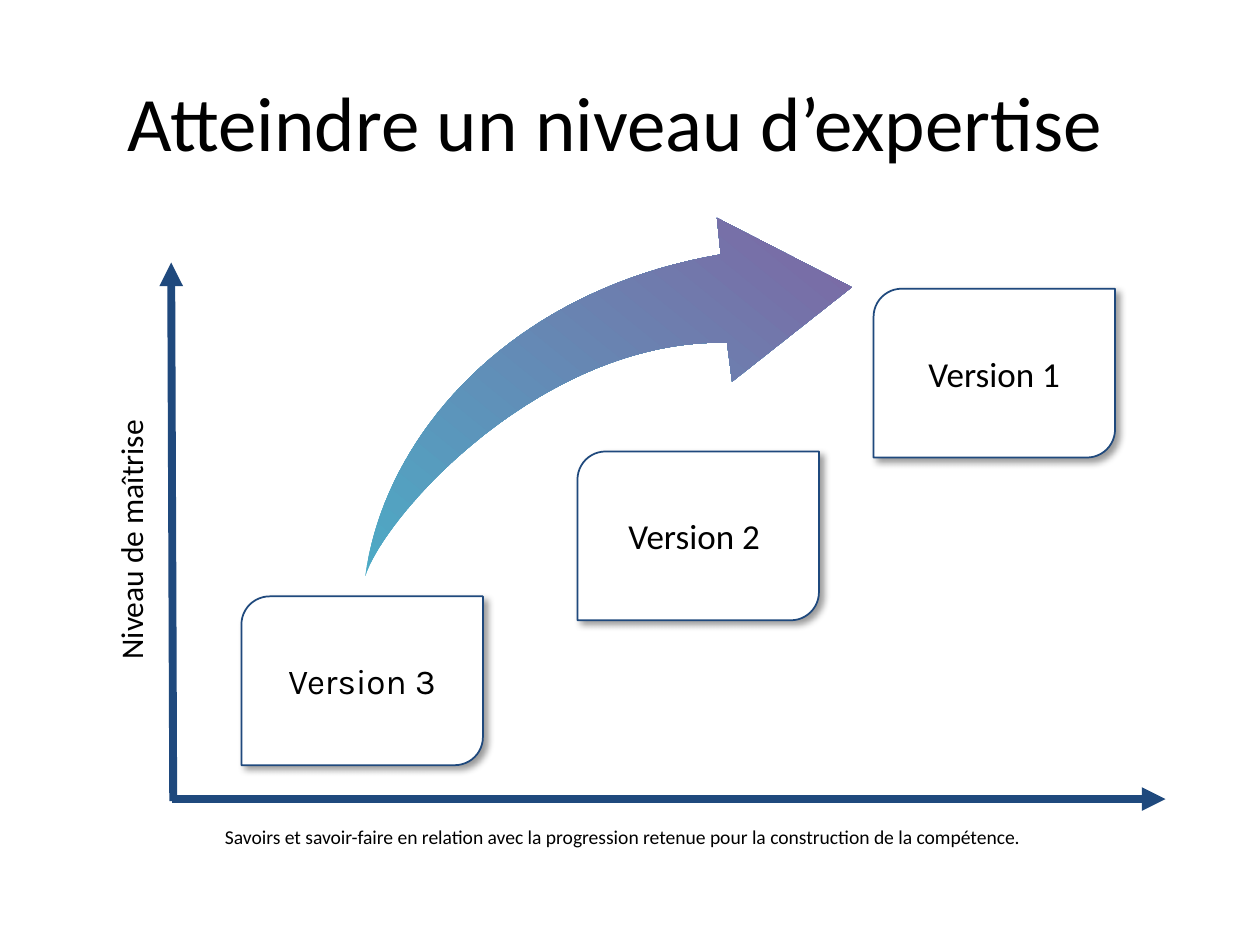
from math import cos, radians, sin

from lxml import etree
from pptx import Presentation
from pptx.dml.color import RGBColor
from pptx.enum.shapes import MSO_CONNECTOR, MSO_SHAPE
from pptx.enum.text import MSO_ANCHOR, PP_ALIGN
from pptx.oxml.ns import qn
from pptx.util import Emu, Inches, Pt

STRAIGHT = MSO_CONNECTOR.STRAIGHT
CARD = MSO_SHAPE.ROUND_2_DIAG_RECTANGLE
LEFT, CENTER = PP_ALIGN.LEFT, PP_ALIGN.CENTER
TOP, MIDDLE = MSO_ANCHOR.TOP, MSO_ANCHOR.MIDDLE

COLUMNS, ROWS = 120, 90
CELL = Inches(10) / COLUMNS
NAVY, BLACK, WHITE = "1F497D", "000000", "FFFFFF"
CARD_SIZE = (23, 16.08)
CARDS = [
    ("Version 3", 23, 56.8, "Karla"),
    ("Version 2 ", 55, 43, "Calibri"),
    ("Version 1", 83.2, 27.5, "Calibri"),
]
SWOOSH_CENTER = (57.6, 37.14)
SWOOSH_TILT = -6
OUTER_CURVE = [(34.8, 54.84), (36.6, 41.64), (48.36, 27.72), (68.64, 24.24)]
ARROWHEAD = [(68.28, 20.76), (81.12, 27.36), (69.72, 36.36)]
INNER_CURVE = [(69.24, 32.64), (51.84, 32.28), (36.84, 48.72), (34.8, 54.84)]


def grid(*cells):
    return [Emu(round(cell * CELL)) for cell in cells]


def color(value):
    return RGBColor.from_string(value)


def write(shape, text, size, font="Calibri", align=CENTER, anchor=TOP, **margins):
    frame = shape.text_frame
    settings = {"word_wrap": True, "vertical_anchor": anchor, **margins}
    for name, value in settings.items():
        setattr(frame, name, value)
    paragraph = frame.paragraphs[0]
    paragraph.text = text
    paragraph.alignment = align
    for name, value in {"size": Pt(size), "name": font}.items():
        setattr(paragraph.font, name, value)
    paragraph.font.color.rgb = color(BLACK)


def add_label(slide, box, text, size, rotation=0, **layout):
    label = slide.shapes.add_textbox(*grid(*box))
    label.rotation = rotation
    write(label, text, size, **layout)


def add_axis(slide, start, end):
    axis = slide.shapes.add_connector(STRAIGHT, *grid(*start, *end))
    axis.line.color.rgb = color(NAVY)
    axis.line.width = Pt(4.5)
    etree.SubElement(axis.line._get_or_add_ln(), qn("a:tailEnd"), type="triangle")
    etree.SubElement(axis._element.spPr, qn("a:effectLst"))


def add_shadow(shape):
    shape.shadow.inherit = False
    effects = shape._element.spPr.find(qn("a:effectLst"))
    shadow = etree.SubElement(
        effects, qn("a:outerShdw"), blurRad=str(Pt(4)), dist=str(Pt(3)),
        dir="2700000", algn="tl", rotWithShape="0",
    )
    tint = etree.SubElement(shadow, qn("a:srgbClr"), val=BLACK)
    etree.SubElement(tint, qn("a:alpha"), val="40000")


def add_card(slide, text, column, row, font):
    card = slide.shapes.add_shape(CARD, *grid(column, row, *CARD_SIZE))
    card.fill.solid()
    card.fill.fore_color.rgb = color(WHITE)
    card.line.color.rgb = color(NAVY)
    card.line.width = Pt(1)
    add_shadow(card)
    sides = ("left", "top", "right", "bottom")
    margins = {f"margin_{side}": Inches(0.05) for side in sides}
    write(card, text, 20, font, anchor=MIDDLE, **margins)


def curve_points(controls, steps=40):
    for step in range(steps + 1):
        t = step / steps
        weights = ((1 - t) ** 3, 3 * t * (1 - t) ** 2, 3 * t * t * (1 - t), t ** 3)
        yield tuple(
            sum(weight * value for weight, value in zip(weights, axis))
            for axis in zip(*controls)
        )


def rotate(point, center, degrees):
    angle = radians(degrees)
    dx, dy = point[0] - center[0], point[1] - center[1]
    return (
        center[0] + dx * cos(angle) - dy * sin(angle),
        center[1] + dx * sin(angle) + dy * cos(angle),
    )


def add_swoosh(slide):
    outline = [*curve_points(OUTER_CURVE), *ARROWHEAD, *curve_points(INNER_CURVE)]
    level = [grid(*rotate(point, SWOOSH_CENTER, -SWOOSH_TILT)) for point in outline]
    builder = slide.shapes.build_freeform(*level[0])
    builder.add_line_segments(level[1:], close=True)
    swoosh = builder.convert_to_shape()
    swoosh.rotation = SWOOSH_TILT
    swoosh.shadow.inherit = False
    swoosh.line.fill.background()
    swoosh.fill.gradient()
    swoosh.fill.gradient_angle = 45
    for stop, position, tone in zip(
        swoosh.fill.gradient_stops, (0, 1), ("4BACC6", "8064A2")
    ):
        stop.position = position
        stop.color.rgb = color(tone)


def main():
    deck = Presentation()
    deck.slide_width, deck.slide_height = grid(COLUMNS, ROWS)
    slide = deck.slides.add_slide(deck.slide_layouts[6])
    add_axis(slide, (16.4, 76.1), (111, 76.1))
    add_axis(slide, (16.5, 76.3), (16.3, 25))
    add_label(
        slide, (15, 78, 89, 4.8),
        "Savoirs et savoir-faire en relation avec la progression retenue "
        "pour la construction de la compétence. ", 11.2,
    )
    add_label(slide, (-11.9, 49, 48.7, 4.8), "Niveau de maîtrise", 18, rotation=270)
    add_label(
        slide, (11, 4, 106, 15), "Atteindre un niveau d’expertise", 44,
        align=LEFT, anchor=MIDDLE,
    )
    for card in CARDS:
        add_card(slide, *card)
    add_swoosh(slide)
    deck.save("out.pptx")


if __name__ == "__main__":
    main()
